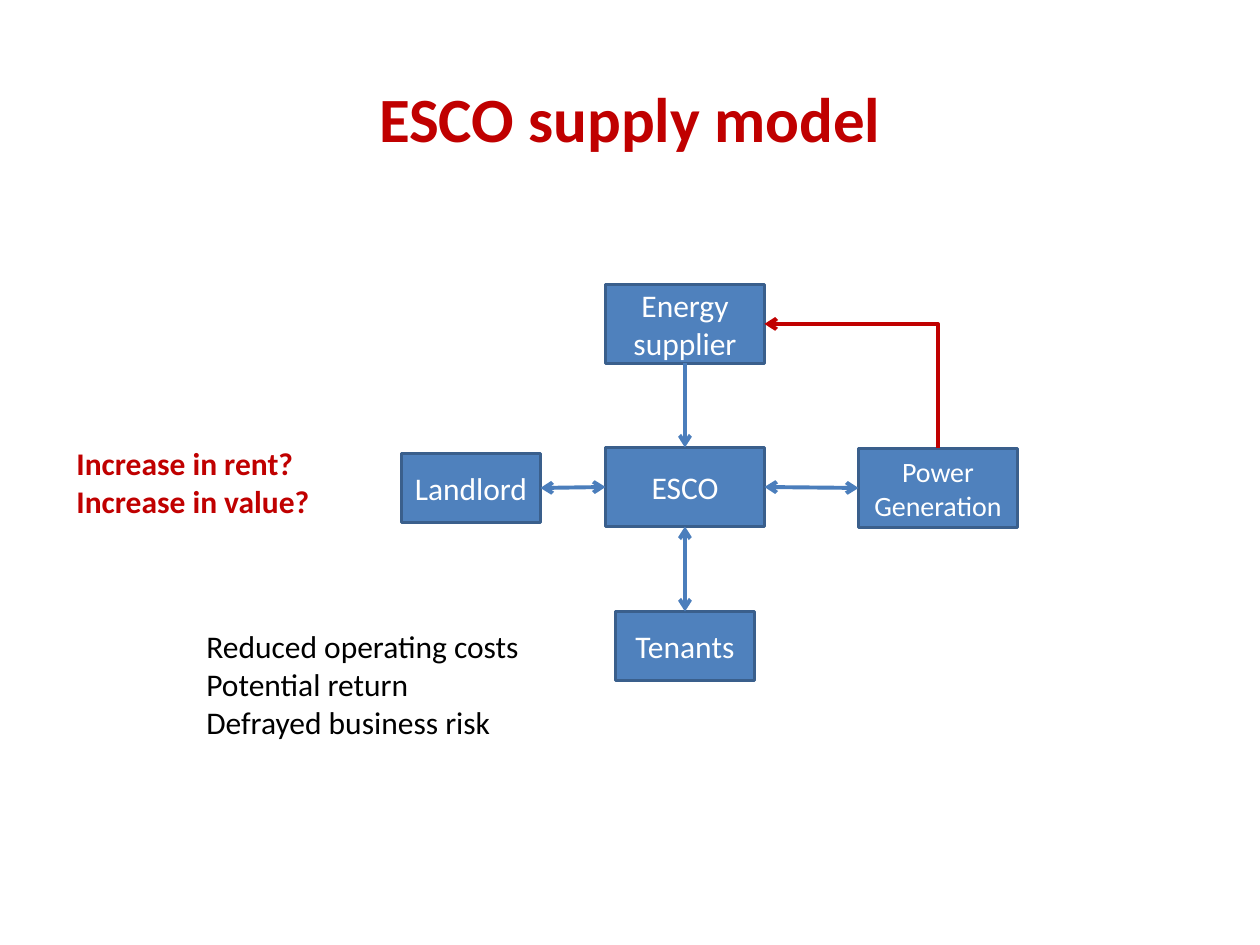
from lxml import etree
from pptx import Presentation
from pptx import util as u
from pptx.dml.color import RGBColor
from pptx.enum import shapes, text
from pptx.oxml.ns import qn

SCALE = 914400 / 126
TOP, LEFT, BOTTOM, RIGHT = range(4)
BLUE, EDGE, ARROW = "4F81BD", "3A5F8C", "4B7EBC"
RED, WHITE, BLACK = "C00000", "FFFFFF", "000000"
LARGE, SMALL = (159, 79), (139, 69)


def px(value):
    return u.Emu(round(value * SCALE))


def color(value):
    return RGBColor.from_string(value)


def style_text(frame, size, hue, bold=False, align=text.PP_ALIGN.LEFT):
    for paragraph in frame.paragraphs:
        paragraph.alignment = align
        for run in paragraph.runs:
            run.font.name = "Calibri"
            run.font.size = u.Pt(size)
            run.font.bold = bold
            run.font.color.rgb = color(hue)


def add_title(slide, label):
    title = slide.shapes.title
    title.left, title.top, title.width, title.height = map(px, (63, 38, 1134, 158))
    title.text_frame.text = label
    title.text_frame.vertical_anchor = text.MSO_ANCHOR.MIDDLE
    style_text(title.text_frame, 36, RED, True, text.PP_ALIGN.CENTER)


def add_box(slide, label, center_x, center_y, size, font_size=18):
    width, height = size
    box = slide.shapes.add_shape(
        shapes.MSO_SHAPE.RECTANGLE,
        px(center_x - width / 2), px(center_y - height / 2), px(width), px(height))
    box.shadow.inherit = False
    box.fill.solid()
    box.fill.fore_color.rgb = color(BLUE)
    box.line.color.rgb = color(EDGE)
    box.line.width = u.Pt(2)
    box.text_frame.text = label
    box.text_frame.word_wrap = True
    box.text_frame.vertical_anchor = text.MSO_ANCHOR.MIDDLE
    style_text(box.text_frame, font_size, WHITE, align=text.PP_ALIGN.CENTER)
    return box


def add_arrow(slide, start, start_site, end, end_site, ends, hue=ARROW, bent=False):
    kind = shapes.MSO_CONNECTOR.ELBOW if bent else shapes.MSO_CONNECTOR.STRAIGHT
    connector = slide.shapes.add_connector(kind, 0, 0, 0, 0)
    connector.begin_connect(start, start_site)
    connector.end_connect(end, end_site)
    connector.line.color.rgb = color(hue)
    connector.line.width = u.Pt(2.25)
    properties = connector._element.spPr
    if bent:
        properties.find(qn("a:prstGeom")).set("prst", "bentConnector2")
    for end_name in ends:
        etree.SubElement(properties.find(qn("a:ln")), qn(f"a:{end_name}"), type="arrow")
    etree.SubElement(properties, qn("a:effectLst"))


def add_note(slide, lines, left, top, width, height, hue, bold=False):
    note = slide.shapes.add_textbox(*map(px, (left, top, width, height)))
    note.text_frame.text = "\n".join(lines)
    note.text_frame.word_wrap = False
    note.text_frame.auto_size = text.MSO_AUTO_SIZE.SHAPE_TO_FIT_TEXT
    style_text(note.text_frame, 18, hue, bold)


def main():
    presentation = Presentation()
    presentation.slide_width, presentation.slide_height = px(1260), px(945)
    slide = presentation.slides.add_slide(presentation.slide_layouts[5])
    add_title(slide, "ESCO supply model")

    power = add_box(slide, "Power Generation", 938, 488, LARGE, 16)
    supplier = add_box(slide, "Energy supplier", 685, 324, LARGE)
    landlord = add_box(slide, "Landlord", 471, 488, SMALL)
    tenants = add_box(slide, "Tenants", 685, 646, SMALL)
    esco = add_box(slide, "ESCO", 685, 487, LARGE)

    both = ("headEnd", "tailEnd")
    add_arrow(slide, landlord, RIGHT, esco, LEFT, both)
    add_arrow(slide, supplier, BOTTOM, esco, TOP, ("tailEnd",))
    add_arrow(slide, esco, RIGHT, power, LEFT, both)
    add_arrow(slide, tenants, TOP, esco, BOTTOM, both)
    add_arrow(slide, supplier, RIGHT, power, TOP, ("headEnd",), RED, bent=True)

    add_note(slide, ("Reduced operating costs", "Potential return", "Defrayed business risk"),
             194, 621, 341, 127, BLACK)
    add_note(slide, ("Increase in rent?", "Increase in value?"), 64, 438, 260, 89, RED, True)
    presentation.save("out.pptx")


if __name__ == "__main__":
    main()
